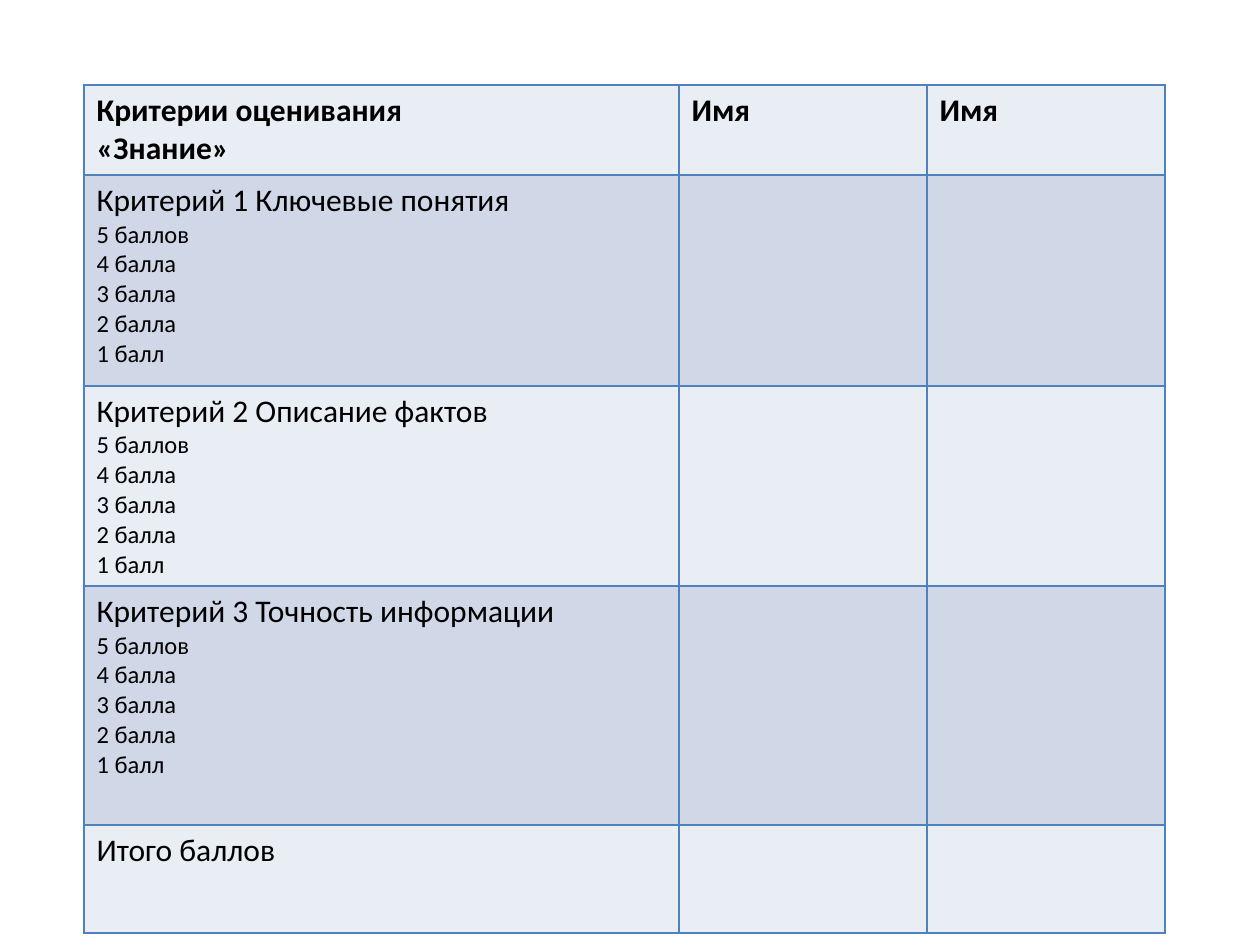
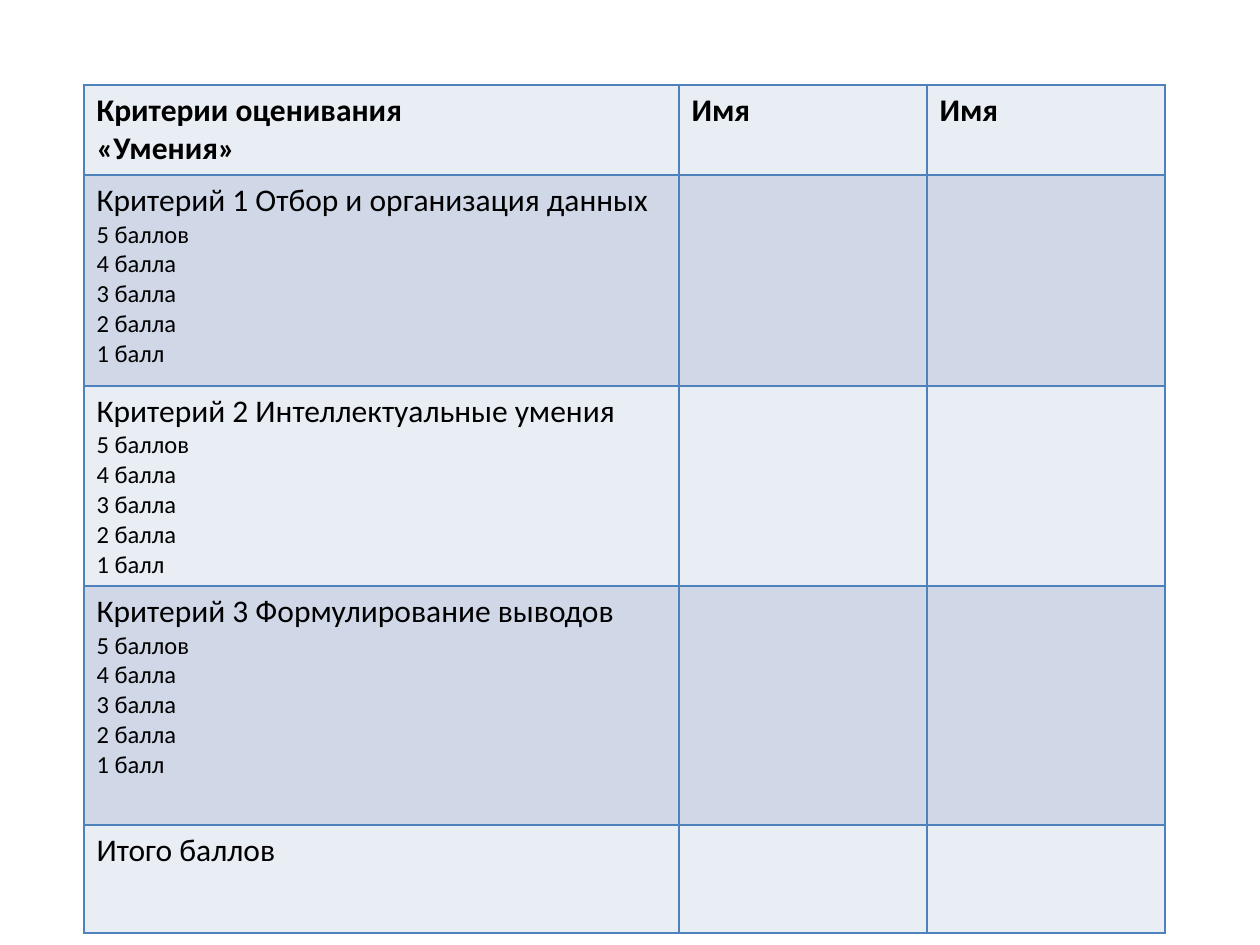
from lxml.etree import SubElement
from pptx import Presentation
from pptx.dml.color import RGBColor
from pptx.oxml.ns import qn
from pptx.util import Emu, Pt

PX_PER_INCH = 126
FONT = "Calibri"
TEXT_COLOUR = "000000"
BORDER_COLOUR = "4F81BD"
BAND_COLOURS = ("E9EDF4", "D0D8E8")

TABLE_LEFT, TABLE_TOP = 84, 85
COLUMN_WIDTHS = (595, 248, 238)
ROW_HEIGHTS = (90, 211, 200, 239, 108)

SCORES = ["5 баллов", "4 балла", "3 балла", "2 балла", "1 балл"]
RUBRICS = {
    "«Знание»": [
        "Ключевые понятия",
        "Описание фактов",
        "Точность информации",
    ],
    "«Умения»": [
        "Отбор и организация данных",
        "Интеллектуальные умения",
        "Формулирование выводов",
    ],
}


def px(length):
    return Emu(round(length * 914400 / PX_PER_INCH))


def colour(hex_code):
    return RGBColor.from_string(hex_code)


def add_borders(cell, hex_code, points=1):
    properties = cell._tc.get_or_add_tcPr()
    for side in ("a:lnL", "a:lnR", "a:lnT", "a:lnB"):
        line = SubElement(properties, qn(side), w=str(Pt(points)))
        fill = SubElement(line, qn("a:solidFill"))
        SubElement(fill, qn("a:srgbClr"), val=hex_code)


def style_cell(cell, fill_colour):
    # Borders come before the fill in the cell's XML
    add_borders(cell, BORDER_COLOUR)
    cell.fill.solid()
    cell.fill.fore_color.rgb = colour(fill_colour)


def write_cell(cell, lines, sizes, bold=False):
    cell.text_frame.text = "\n".join(lines)
    for para, size in zip(cell.text_frame.paragraphs, sizes):
        for span in para.runs:
            span.font.name = FONT
            span.font.size = Pt(size)
            span.font.bold = bold
            span.font.color.rgb = colour(TEXT_COLOUR)


def add_grid(slide):
    frame = slide.shapes.add_table(
        len(ROW_HEIGHTS), len(COLUMN_WIDTHS), px(TABLE_LEFT), px(TABLE_TOP),
        px(sum(COLUMN_WIDTHS)), px(sum(ROW_HEIGHTS)))
    table = frame.table
    table.first_row = table.horz_banding = False
    for column, width in zip(table.columns, COLUMN_WIDTHS):
        column.width = px(width)
    for index, (row, height) in enumerate(zip(table.rows, ROW_HEIGHTS)):
        row.height = px(height)
        for cell in row.cells:
            style_cell(cell, BAND_COLOURS[index % 2])
    return table


def add_rubric(deck, subject, criteria):
    slide = deck.slides.add_slide(deck.slide_layouts[6])
    table = add_grid(slide)

    # Header row
    write_cell(table.cell(0, 0), ["Критерии оценивания", subject], (18, 18), bold=True)
    for column in (1, 2):
        write_cell(table.cell(0, column), ["Имя"], (18,), bold=True)

    # One row per criterion with its score scale
    for number, criterion in enumerate(criteria, start=1):
        lines = [f"Критерий {number} {criterion}"] + SCORES
        write_cell(table.cell(number, 0), lines, [18] + [14] * len(SCORES))

    # Total row
    write_cell(table.cell(len(criteria) + 1, 0), ["Итого баллов"], (18,))


def main():
    deck = Presentation()
    deck.slide_width, deck.slide_height = px(1260), px(945)
    for subject, criteria in RUBRICS.items():
        add_rubric(deck, subject, criteria)
    deck.save("out.pptx")


if __name__ == "__main__":
    main()
